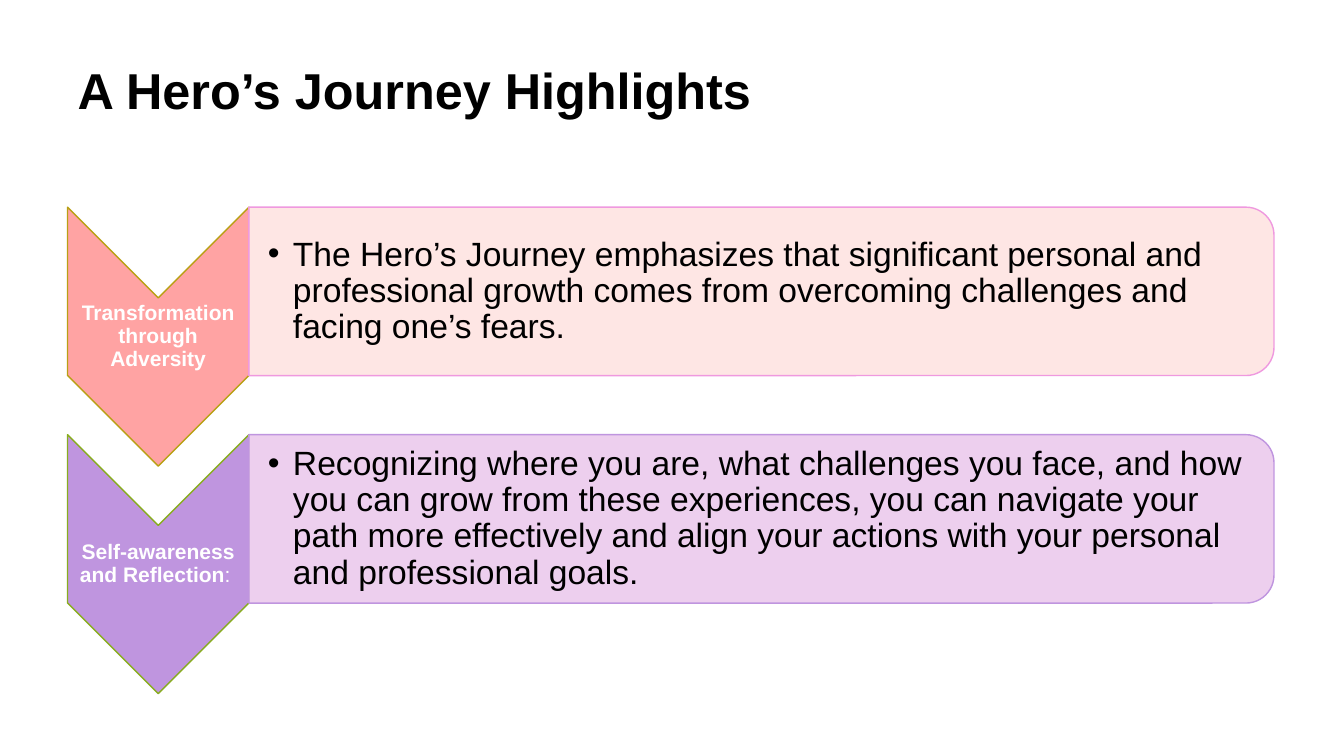
from dataclasses import dataclass

from lxml.etree import SubElement
from pptx import Presentation
from pptx.dml.color import RGBColor
from pptx.enum.shapes import MSO_SHAPE
from pptx.enum.text import MSO_ANCHOR, PP_ALIGN
from pptx.oxml.ns import qn
from pptx.util import Pt


@dataclass(frozen=True)
class Theme:
    font: str = "Arial"
    title_size: int = 36
    label_size: int = 15
    body_size: int = 24
    dark: str = "000000"
    light: str = "FFFFFF"
    panel_opacity: int = 90


@dataclass(frozen=True)
class Box:
    left: float
    top: float
    width: float
    height: float

    def points(self):
        return [Pt(value) for value in (self.left, self.top, self.width, self.height)]


@dataclass(frozen=True)
class Highlight:
    label: tuple
    body: str
    chevron_fill: str
    chevron_line: str
    panel_fill: str
    panel_line: str


THEME = Theme()
HIGHLIGHTS = [
    Highlight(
        (("Transformation through Adversity", True),),
        "The Hero’s Journey emphasizes that significant personal and professional "
        "growth comes from overcoming challenges and facing one’s fears.",
        "FFA3A3", "B9A014", "FEE4E2", "EF99DF",
    ),
    Highlight(
        (("Self-awareness and Reflection", True), (": ", False)),
        "Recognizing where you are, what challenges you face, and how you can grow "
        "from these experiences, you can navigate your path more effectively and "
        "align your actions with your personal and professional goals.",
        "BF95DF", "88AD1F", "ECCAED", "BF95DF",
    ),
]


def apply_format(target, values):
    for name, value in values.items():
        setattr(target, name, value)


def add_span(para, text, size, color, bold=False):
    span = para.add_run()
    span.text = text
    apply_format(span.font, {"name": THEME.font, "size": Pt(size), "bold": bold})
    span.font.color.rgb = RGBColor.from_string(color)


def add_title(page, box, text):
    title = page.shapes.title
    title.left, title.top, title.width, title.height = box.points()
    apply_format(title.text_frame, {"vertical_anchor": MSO_ANCHOR.TOP, "word_wrap": True})
    para = title.text_frame.paragraphs[0]
    apply_format(para, {"alignment": PP_ALIGN.LEFT, "line_spacing": 0.9})
    add_span(para, text, THEME.title_size, THEME.dark, True)


def add_turned_shape(page, kind, box, fill, line):
    turned = Box(
        box.left + (box.width - box.height) / 2,
        box.top + (box.height - box.width) / 2,
        box.height,
        box.width,
    )
    shape = page.shapes.add_shape(kind, *turned.points())
    shape.rotation = 90
    shape.shadow.inherit = False
    shape.fill.solid()
    shape.fill.fore_color.rgb = RGBColor.from_string(fill)
    shape.line.color.rgb = RGBColor.from_string(line)
    shape.line.width = Pt(1)
    return shape


def add_text(page, box, side_margin, margin):
    frame = page.shapes.add_textbox(*box.points()).text_frame
    apply_format(frame, {
        "word_wrap": True,
        "vertical_anchor": MSO_ANCHOR.MIDDLE,
        "margin_left": Pt(side_margin),
        "margin_right": Pt(margin),
        "margin_top": Pt(margin),
        "margin_bottom": Pt(margin),
    })
    para = frame.paragraphs[0]
    para.line_spacing = 0.9
    return para


def add_bullet(para, indent):
    para.level = 1
    properties = para._p.get_or_add_pPr()
    properties.set("marL", str(Pt(indent)))
    properties.set("indent", str(-Pt(indent)))
    SubElement(properties, qn("a:buFont")).set("typeface", THEME.font)
    SubElement(properties, qn("a:buChar")).set("char", "•")


def add_chevron(page, box, highlight):
    add_turned_shape(page, MSO_SHAPE.CHEVRON, box,
                     highlight.chevron_fill, highlight.chevron_line)
    notch = box.width / 2
    label_box = Box(box.left, box.top + notch, box.width, box.height - 2 * notch)
    para = add_text(page, label_box, 0.75, 0.75)
    para.alignment = PP_ALIGN.CENTER
    for text, bold in highlight.label:
        add_span(para, text, THEME.label_size, THEME.light, bold)


def add_panel(page, box, highlight):
    panel = add_turned_shape(page, MSO_SHAPE.ROUND_2_SAME_RECTANGLE, box,
                             highlight.panel_fill, highlight.panel_line)
    color = panel.fill._xPr.find(qn("a:solidFill"))[0]
    SubElement(color, qn("a:alpha")).set("val", str(THEME.panel_opacity * 1000))
    inset = 6
    text_box = Box(box.left, box.top + inset, box.width - inset, box.height - 2 * inset)
    para = add_text(page, text_box, 13.5, 1.25)
    add_bullet(para, 18)
    add_span(para, highlight.body, THEME.body_size, THEME.dark)


def add_highlight(page, box, highlight):
    chevron_width = 129.6
    panel_height = 120.3
    add_chevron(page, Box(box.left, box.top, chevron_width, box.height), highlight)
    panel_box = Box(box.left + chevron_width, box.top, box.width - chevron_width, panel_height)
    add_panel(page, panel_box, highlight)


def add_highlights_page(deck):
    page = deck.slides.add_slide(deck.slide_layouts[5])
    left, width = 48.2, 861.8
    add_title(page, Box(left, 43.2, width, 89.3), "A Hero’s Journey Highlights")
    for index, highlight in enumerate(HIGHLIGHTS):
        add_highlight(page, Box(left, 148 + index * 162.5, width, 185), highlight)


def main():
    deck = Presentation()
    apply_format(deck, {"slide_width": Pt(960), "slide_height": Pt(540)})
    add_highlights_page(deck)
    deck.save("out.pptx")


if __name__ == "__main__":
    main()
